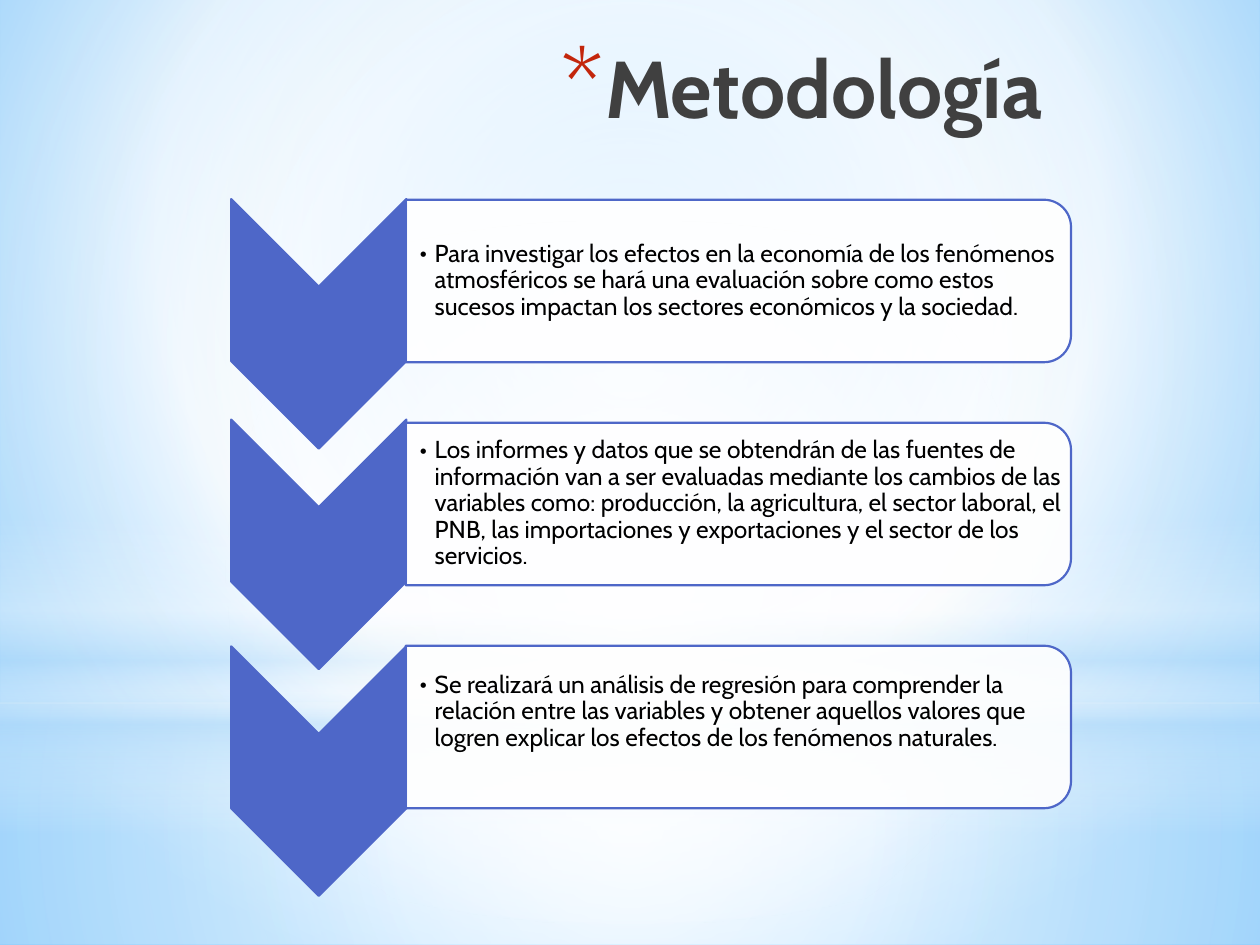
from lxml.etree import SubElement
from pptx import Presentation
from pptx.dml.color import RGBColor
from pptx.enum.shapes import MSO_SHAPE
from pptx.enum.text import MSO_ANCHOR, PP_ALIGN
from pptx.oxml.ns import qn
from pptx.util import Inches, Pt

FONT = "Cabin"
BLUE = "4E67C8"
TITLE = "Metodología"
CENTER = (50, 50, 50, 50)

# Gradient stops: position %, colour, opacity %
BACKGROUND = [(0, "9ED5FF", 100), (60, "FFFFFF", 100), (100, "5BB9FF", 100)]

# Shape, box, stops, focus of a circular gradient (None: vertical linear)
LAYERS = [
    (MSO_SHAPE.RECTANGLE, (0, 5.58, 10, 1.92),
     [(0, "FFFFFF", 91), (37, "FFFFFF", 76), (100, "B4DCFA", 79)], CENTER),
    (MSO_SHAPE.RECTANGLE, (0, 0, 10, 5.58),
     [(0, "FFFFFF", 89), (48, "FFFFFF", 62), (100, "B4DCFA", 79)], CENTER),
    (MSO_SHAPE.RECTANGLE, (0, 4.12, 10, 2.5),
     [(0, "FFFFFF", 0), (29, "FFFFFF", 30), (45, "B4DCFA", 40),
      (55, "FFFFFF", 26), (65, "B4DCFA", 60), (100, "FFFFFF", 0)], None),
    (MSO_SHAPE.OVAL, (0, 1.75, 10, 5.58),
     [(0, "FFFFFF", 100), (56, "FFFFFF", 0)], CENTER),
]

# Chevron centre, text shift against the panel centre, text
STEPS = [
    (2.57, 0, "Para investigar los efectos en la economía de los fenómenos "
     "atmosféricos se hará una evaluación sobre como estos sucesos impactan "
     "los sectores económicos y la sociedad."),
    (4.32, 0, "Los informes y datos que se obtendrán de las fuentes de "
     "información van a ser evaluadas mediante los cambios de las variables "
     "como: producción, la agricultura, el sector laboral, el PNB, las "
     "importaciones y exportaciones y el sector de los servicios."),
    (6.12, -0.12, "Se realizará un análisis de regresión para comprender la "
     "relación entre las variables y obtener aquellos valores que logren "
     "explicar los efectos de los fenómenos naturales."),
]
CHEVRON_SIZE = (1.98, 1.39)
PANEL_SIZE = (1.29, 5.28)
CHEVRON_X, PANEL_X = 2.53, 5.86
FIRST_PANEL_Y, PANEL_PITCH = 2.23, 1.77
TEXT_LEFT, TEXT_WIDTH, TEXT_HEIGHT = 3.22, 5.22, 1.16


def color(value):
    return RGBColor.from_string(value)


def set_alpha(color_element, percent):
    SubElement(color_element, qn("a:alpha"), val=str(percent * 1000))


def set_gradient(fill, owner, stops, focus):
    """Fill with the stops; owner is the XML element that holds the fill."""
    fill.gradient()
    gradient = owner.find(".//" + qn("a:gradFill"))
    for child in list(gradient):
        gradient.remove(child)
    stop_list = SubElement(gradient, qn("a:gsLst"))
    for position, value, opacity in stops:
        stop = SubElement(stop_list, qn("a:gs"), pos=str(position * 1000))
        set_alpha(SubElement(stop, qn("a:srgbClr"), val=value), opacity)
    if focus:
        shade = SubElement(gradient, qn("a:path"), path="circle")
        edges = {side: str(share * 1000) for side, share in zip("ltrb", focus)}
        SubElement(shade, qn("a:fillToRect"), **edges)
    else:
        SubElement(gradient, qn("a:lin"), ang="5400000", scaled="0")


def set_bullet(paragraph, character, indent, bullet_color=None, size=None):
    properties = paragraph._p.get_or_add_pPr()
    properties.set("marL", str(Inches(indent)))
    properties.set("indent", str(-Inches(indent)))
    if bullet_color:
        holder = SubElement(properties, qn("a:buClr"))
        SubElement(holder, qn("a:srgbClr"), val=bullet_color)
    if size:
        SubElement(properties, qn("a:buSzPct"), val=str(size * 1000))
    SubElement(properties, qn("a:buFont"), typeface=FONT)
    SubElement(properties, qn("a:buChar"), char=character)


def add_run(paragraph, text, size, value, bold=False):
    run = paragraph.add_run()
    run.text = text
    run.font.name = FONT
    run.font.size = Pt(size)
    run.font.bold = bold
    run.font.color.rgb = color(value)


def add_turned_shape(slide, kind, center_x, center_y, size, fill):
    """Add an outlined shape turned by 90 degrees about its centre."""
    width, height = size
    shape = slide.shapes.add_shape(
        kind, Inches(center_x - width / 2), Inches(center_y - height / 2),
        Inches(width), Inches(height))
    shape.rotation = 90
    shape.shadow.inherit = False
    shape.fill.solid()
    shape.fill.fore_color.rgb = color(fill)
    shape.line.color.rgb = color(BLUE)
    shape.line.width = Pt(1.25)
    return shape


def add_step(slide, index, chevron_y, text_shift, text):
    panel_y = FIRST_PANEL_Y + index * PANEL_PITCH
    add_turned_shape(slide, MSO_SHAPE.CHEVRON, CHEVRON_X, chevron_y,
                     CHEVRON_SIZE, BLUE)
    panel = add_turned_shape(slide, MSO_SHAPE.ROUND_2_SAME_RECTANGLE, PANEL_X,
                             panel_y, PANEL_SIZE, "FFFFFF")
    fill_color = panel._element.spPr.find(qn("a:solidFill"))[0]
    set_alpha(fill_color, 90)

    box = slide.shapes.add_textbox(
        Inches(TEXT_LEFT), Inches(panel_y - TEXT_HEIGHT / 2 + text_shift),
        Inches(TEXT_WIDTH), Inches(TEXT_HEIGHT))
    frame = box.text_frame
    frame.word_wrap = True
    frame.vertical_anchor = MSO_ANCHOR.MIDDLE
    frame.margin_left = Inches(0.11)
    frame.margin_top = frame.margin_right = frame.margin_bottom = Inches(0.01)
    paragraph = frame.paragraphs[0]
    paragraph.line_spacing = 0.9
    set_bullet(paragraph, "•", 0.12)
    add_run(paragraph, text, 14, "000000")


def format_title(slide):
    title = slide.shapes.title
    slide.shapes._spTree.append(title._element)  # in front of the layers
    title.left, title.top = Inches(1.25), Inches(0.25)
    title.width, title.height = Inches(7.12), Inches(1.25)
    title.text_frame.vertical_anchor = MSO_ANCHOR.TOP
    paragraph = title.text_frame.paragraphs[0]
    paragraph.alignment = PP_ALIGN.RIGHT
    set_bullet(paragraph, "*", 0.35, "C3260C", 128)
    add_run(paragraph, TITLE, 46, "404040", bold=True)


def main():
    presentation = Presentation()
    presentation.slide_width, presentation.slide_height = Inches(10), Inches(7.5)
    slide = presentation.slides.add_slide(presentation.slide_layouts[5])
    set_gradient(slide.background.fill, slide._element, BACKGROUND,
                 (20, 10, 20, 60))
    for kind, box, stops, focus in LAYERS:
        layer = slide.shapes.add_shape(kind, *map(Inches, box))
        layer.shadow.inherit = False
        layer.line.fill.background()
        set_gradient(layer.fill, layer._element.spPr, stops, focus)
    format_title(slide)
    for index, step in enumerate(STEPS):
        add_step(slide, index, *step)
    presentation.save("out.pptx")


if __name__ == "__main__":
    main()
